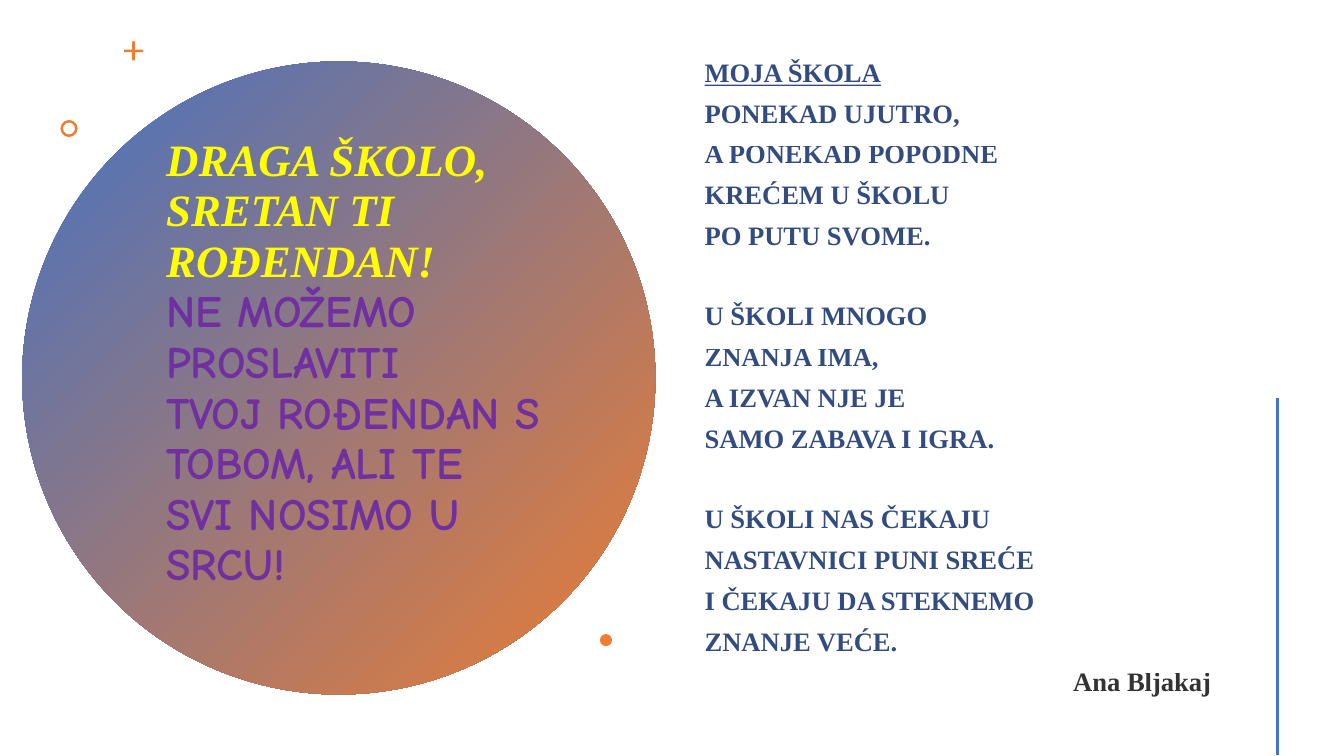
from lxml import etree
from pptx import Presentation
from pptx.dml.color import RGBColor
from pptx.enum.shapes import MSO_CONNECTOR, MSO_SHAPE
from pptx.enum.text import MSO_ANCHOR, PP_ALIGN
from pptx.oxml.ns import qn
from pptx.util import Inches, Pt

BLUE = RGBColor(0x44, 0x72, 0xC4)
ORANGE = RGBColor(0xED, 0x7D, 0x31)
YELLOW = RGBColor(0xFF, 0xFF, 0x00)
PURPLE = RGBColor(0x70, 0x30, 0xA0)
NAVY = RGBColor(0x00, 0x20, 0x60)
BLACK = RGBColor(0x00, 0x00, 0x00)
SERIF, COMIC = "Times New Roman", "Comic Neue"
NBSP = chr(160)

GREETING = ["DRAGA ŠKOLO,", "SRETAN TI ROĐENDAN!"]
MESSAGE = (f"NE MOŽEMO PROSLAVITI TVOJ{NBSP}ROĐENDAN S TOBOM, "
           f"ALI TE SVI{NBSP}NOSIMO U SRCU!")
POEM_TITLE = "MOJA ŠKOLA"
STANZAS = [
    ["PONEKAD UJUTRO,", "A PONEKAD POPODNE", "KREĆEM U ŠKOLU", "PO PUTU SVOME."],
    ["U ŠKOLI MNOGO", "ZNANJA IMA,", "A IZVAN NJE JE", "SAMO ZABAVA I IGRA."],
    ["U ŠKOLI NAS ČEKAJU", "NASTAVNICI PUNI SREĆE", "I ČEKAJU DA STEKNEMO",
     "ZNANJE VEĆE."],
]
AUTHOR = "Ana Bljakaj"
LINE_GAP, STANZA_GAP = 10, 38.3

# shape, left, top, size, adjustment
ORNAMENTS = [
    (MSO_SHAPE.CROSS, 1.23, 0.41, 0.19, 0.43),
    (MSO_SHAPE.DONUT, 0.6, 1.19, 0.17, 0.15),
    (MSO_SHAPE.OVAL, 5.95, 6.29, 0.12, None),
]


def add_plain_shape(kind, left, top, size):
    sp = slide.shapes.add_shape(kind, Inches(left), Inches(top),
                                Inches(size), Inches(size))
    sp.shadow.inherit = False
    sp.line.fill.background()
    return sp


def add_text_frame(left, top, width, height):
    box = slide.shapes.add_textbox(Inches(left), Inches(top),
                                   Inches(width), Inches(height))
    tf = box.text_frame
    tf.word_wrap = True
    tf.vertical_anchor = MSO_ANCHOR.MIDDLE
    return tf


def add_run(p, text, size, font, color, italic=False, alpha=None):
    r = p.add_run()
    r.text = text
    r.font.size = Pt(size)
    r.font.name = font
    r.font.bold = True
    r.font.italic = italic
    r.font.color.rgb = color
    if alpha:
        clr = r.font.fill._xPr.find(qn("a:solidFill"))[0]
        etree.SubElement(clr, qn("a:alpha")).set("val", str(alpha * 1000))
    return r


def add_poem_line(text, gap=LINE_GAP, color=NAVY):
    p = poem.add_paragraph() if poem.paragraphs[0].runs else poem.paragraphs[0]
    p.line_spacing = 0.84
    p.space_before = Pt(gap)
    return p, add_run(p, text, 19, SERIF, color, alpha=80)


prs = Presentation()
prs.slide_width, prs.slide_height = Inches(13.33), Inches(7.5)
slide = prs.slides.add_slide(prs.slide_layouts[6])

circle = add_plain_shape(MSO_SHAPE.OVAL, 0.22, 0.61, 6.28)
circle.fill.gradient()
circle.fill.gradient_angle = 315
for stop, color, position in zip(circle.fill.gradient_stops, (BLUE, ORANGE), (0, 1)):
    stop.color.rgb = color
    stop.position = position

p = add_text_frame(1.55, 1.27, 3.99, 4.67).paragraphs[0]
p.line_spacing = 0.94
for line in GREETING:
    add_run(p, line, 32, SERIF, YELLOW, italic=True)
    p.add_line_break()
add_run(p, MESSAGE, 32, COMIC, PURPLE)

for kind, left, top, size, adjustment in ORNAMENTS:
    sp = add_plain_shape(kind, left, top, size)
    sp.fill.solid()
    sp.fill.fore_color.rgb = ORANGE
    if adjustment:
        sp.adjustments[0] = adjustment

poem = add_text_frame(6.89, 0.57, 5.22, 6.38)
p, r = add_poem_line(POEM_TITLE + "\t", gap=0)
r.font.underline = True
tabs = etree.SubElement(p._p.get_or_add_pPr(), qn("a:tabLst"))
tab = etree.SubElement(tabs, qn("a:tab"))
tab.set("pos", str(Inches(3.59)))
tab.set("algn", "l")
for s, stanza in enumerate(STANZAS):
    for n, line in enumerate(stanza):
        add_poem_line(line, STANZA_GAP if s and n == 0 else LINE_GAP)
p, r = add_poem_line(AUTHOR, color=BLACK)
p.alignment = PP_ALIGN.RIGHT

rule = slide.shapes.add_connector(MSO_CONNECTOR.STRAIGHT, Inches(12.67), Inches(3.95),
                                  Inches(12.67), Inches(7.49))
rule.line.color.rgb = BLUE
rule.line.width = Pt(2)
etree.SubElement(rule._element.spPr, qn("a:effectLst"))

prs.save("out.pptx")
